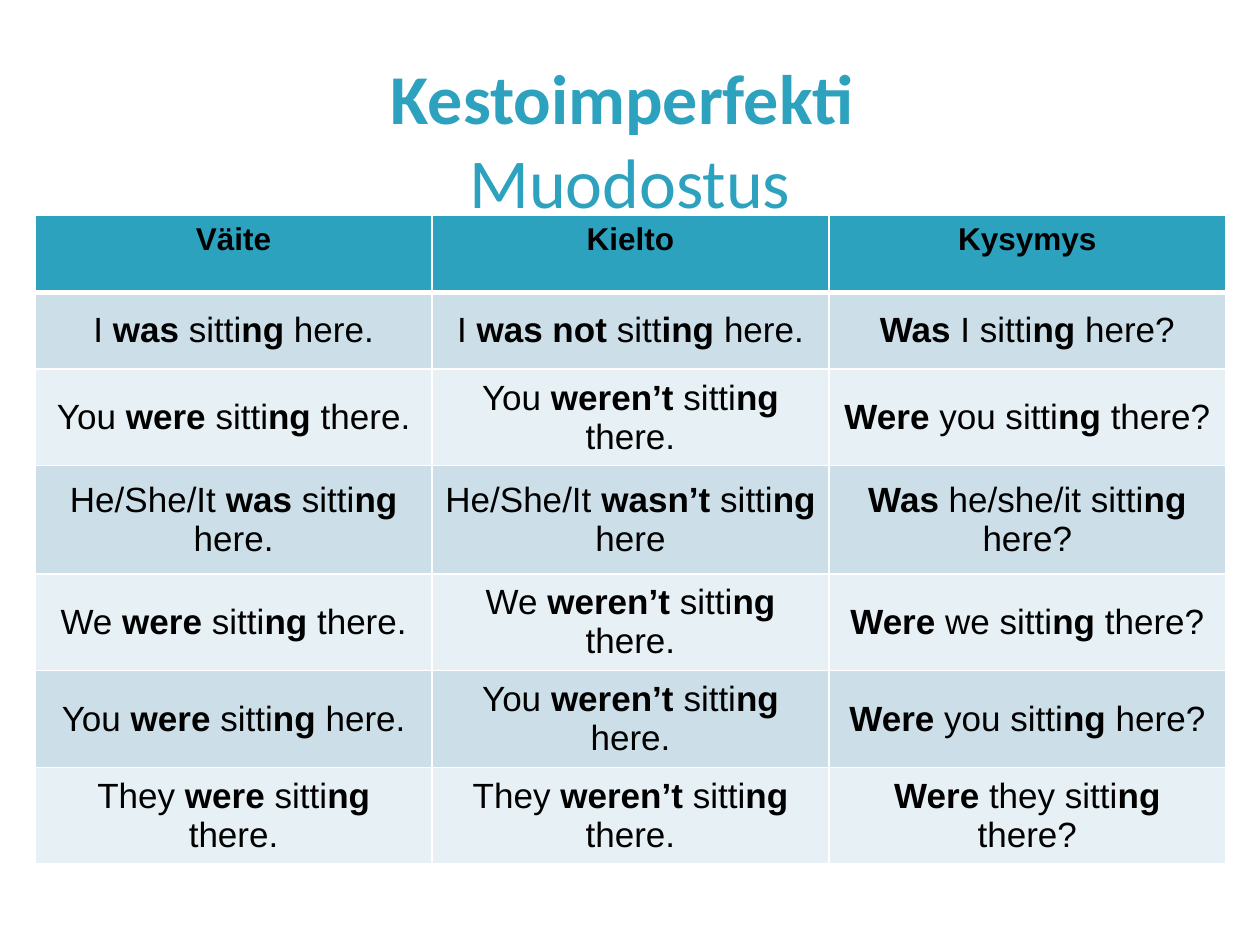
"""Build a slide with a table of past continuous verb forms."""
import pptx
import pptx.dml.color
import pptx.enum.text
import pptx.oxml
import pptx.oxml.ns
import pptx.util

Cm = pptx.util.Cm
Pt = pptx.util.Pt
RGBColor = pptx.dml.color.RGBColor
Anchor = pptx.enum.text.MSO_ANCHOR

TEAL = RGBColor(0x2D, 0xA2, 0xBF)
DARK = RGBColor(0xCC, 0xDF, 0xE8)
LIGHT = RGBColor(0xE7, 0xF0, 0xF4)
BLACK = RGBColor(0, 0, 0)
WHITE = RGBColor(0xFF, 0xFF, 0xFF)

TITLE = "*Kestoimperfekti *\nMuodostus"
ROWS = [
    ("*Väite*", "*Kielto*", "*Kysymys*"),
    ("I *was *sitti*ng* here.", "I *was not *sitt*ing *here.", "*Was *I sitti*ng* here?"),
    ("You *were *sitti*ng* there.", "You *weren’t *sitti*ng* there.",
     "*Were* you sitti*ng* there?"),
    ("He/She/It *was *sitti*ng* here.", "He/She/It *wasn’t *sitti*ng *here",
     "*Was* he/she/it sitti*ng *here?"),
    ("We *were *sitti*ng *there.", "We *weren’t* sitti*ng *there.",
     "*Were* we sitti*ng *there?"),
    ("You *were *sitti*ng *here.", "You *weren’t *sitti*ng *here.",
     "*Were* you sitti*ng *here?"),
    ("They *were *sitti*ng *there.", "They *weren’t *sitti*ng *there.",
     "*Were* they sitti*ng *there?"),
]
HEIGHTS = [1.55, 1.55, 1.83, 2.18, 1.65, 1.55, 1.55]
WIDTH = 8


def write(frame, text, *, size, font="Arial", color=BLACK):
    """Write centred text, with bold parts between asterisks."""
    para = frame.paragraphs[0]
    para.alignment = pptx.enum.text.PP_ALIGN.CENTER
    for row, line in enumerate(text.split("\n")):
        if row:
            para.add_line_break()
        for part, words in enumerate(line.split("*")):
            if words:
                run = para.add_run()
                run.text = words
                run.font.name = font
                run.font.size = Pt(size)
                run.font.bold = part % 2 == 1
                run.font.color.rgb = color


class Deck:
    """Hold the style and the current slide."""

    def __init__(self, slide, font, color):
        self.slide, self.font, self.color = slide, font, color

    def title(self, text, left, top, width, height):
        """Add the heading."""
        box = self.slide.shapes.add_textbox(Cm(left), Cm(top), Cm(width), Cm(height))
        frame = box.text_frame
        frame.word_wrap = True
        frame.vertical_anchor = Anchor.MIDDLE
        write(frame, text, size=40, font=self.font, color=self.color)

    def edge(self, cell, side, width):
        """Draw one white border of a cell."""
        space = pptx.oxml.ns.nsdecls("a")
        cell._tc.get_or_add_tcPr().append(pptx.oxml.parse_xml(
            f'<a:ln{side} {space} w="{Pt(width)}"><a:solidFill>'
            f'<a:srgbClr val="{WHITE}"/></a:solidFill></a:ln{side}>'))

    def table(self, rows, left, top):
        """Add the table with a header and banded rows."""
        count = len(rows[0])
        grid = self.slide.shapes.add_table(
            len(rows), count, Cm(left), Cm(top), Cm(WIDTH * count), Cm(sum(HEIGHTS))).table
        for col in grid.columns:
            col.width = Cm(WIDTH)
        for y, texts in enumerate(rows):
            grid.rows[y].height = Cm(HEIGHTS[y])
            for x, text in enumerate(texts):
                cell = grid.cell(y, x)
                cell.vertical_anchor = Anchor.MIDDLE if y else Anchor.TOP
                for side in "LRTB":
                    thick = (y, side) in ((0, "B"), (1, "T"))
                    self.edge(cell, side, 3 if thick else 1)
                cell.fill.solid()
                cell.fill.fore_color.rgb = (DARK if y % 2 else LIGHT) if y else self.color
                write(cell.text_frame, text, size=20 if y else 18)


def main():
    """Build and save the slide."""
    show = pptx.Presentation()
    show.slide_width, show.slide_height = Cm(25.4), Cm(19.05)
    deck = Deck(show.slides.add_slide(show.slide_layouts[6]), "Calibri", TEAL)
    deck.title(TITLE, 1.27, 1.3, 22.86, 2.97)
    deck.table(ROWS, 0.71, 4.34)
    show.save("out.pptx")


if __name__ == "__main__":
    main()
